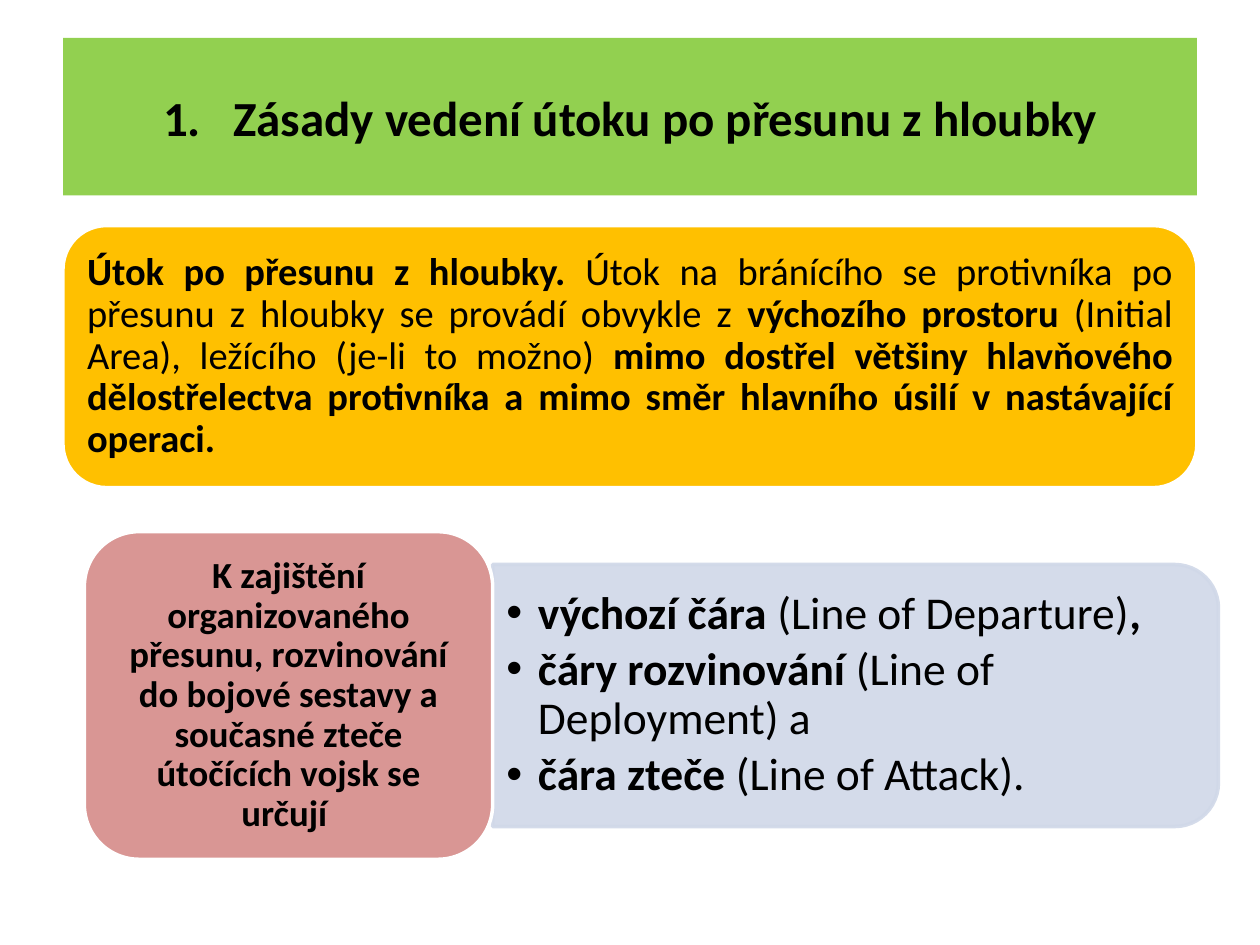
from dataclasses import dataclass

from lxml import etree
from pptx import Presentation, util as u
from pptx.dml.color import RGBColor
from pptx.enum import shapes, text
from pptx.oxml.ns import qn


@dataclass(frozen=True)
class Theme:
    font: str = "Calibri"
    ink: str = "000000"
    white: str = "FFFFFF"
    green: str = "92D050"
    amber: str = "FFC000"
    rose: str = "D99694"
    pale_blue: str = "D0D8E8"
    title_size: int = 28
    intro_size: int = 22
    purpose_size: int = 21
    list_size: int = 26
    line_width: int = 2
    line_spacing: float = 0.9


@dataclass(frozen=True)
class Box:
    left: float
    top: float
    width: float
    height: float

    def lengths(self) -> tuple:
        return tuple(map(u.Inches, (self.left, self.top, self.width, self.height)))


@dataclass(frozen=True)
class Card:
    box: Box
    fill: str
    size: int
    align: text.PP_ALIGN
    inset_y: float
    markup: str


THEME = Theme()
TITLE = "Zásady vedení útoku po přesunu z hloubky"
CARDS = (
    Card(Box(0.5, 1.79, 9, 2.08), THEME.amber, THEME.intro_size, text.PP_ALIGN.JUSTIFY, 0.09,
         "*Útok po přesunu z hloubky. *Útok na bránícího se protivníka po přesunu z hloubky "
         "se provádí obvykle z *výchozího prostoru *(Initial Area), ležícího (je-li to možno) "
         "*mimo dostřel většiny hlavňového dělostřelectva protivníka a mimo směr hlavního "
         "úsilí v nastávající operaci.*"),
    Card(Box(0.67, 4.22, 3.24, 2.6), THEME.rose, THEME.purpose_size, text.PP_ALIGN.CENTER, 0.04,
         "*K zajištění organizovaného přesunu, rozvinování do bojové sestavy a současné zteče "
         "útočících vojsk se určují *"),
)
LINES = (
    "*výchozí čára *(Line of Departure)*,*",
    "*čáry rozvinování *(Line of Deployment) a",
    "*čára zteče *(Line of Attack).",
)
PANEL = Box(5.75, 2.64, 2.08, 5.76)
LIST = Box(3.91, 4.58, 5.66, 1.88)


def place(sp, box: Box) -> None:
    sp.left, sp.top, sp.width, sp.height = box.lengths()


def paint(sp, fill: str, line: str) -> None:
    sp.shadow.inherit = False
    sp.fill.solid()
    sp.fill.fore_color.rgb = RGBColor.from_string(fill)
    sp.line.color.rgb = RGBColor.from_string(line)
    sp.line.width = u.Pt(THEME.line_width)


def set_frame(tf, inset_x: float, inset_y: float) -> None:
    tf.word_wrap = True
    tf.auto_size = text.MSO_AUTO_SIZE.NONE
    tf.vertical_anchor = text.MSO_ANCHOR.MIDDLE
    tf.margin_left = tf.margin_right = u.Inches(inset_x)
    tf.margin_top = tf.margin_bottom = u.Inches(inset_y)


def write(p, markup: str, size: int) -> None:
    """Add runs to a paragraph; text between asterisks is bold."""
    for i, part in enumerate(markup.split("*")):
        if part:
            r = p.add_run()
            r.text = part
            r.font.name = THEME.font
            r.font.size = u.Pt(size)
            r.font.bold = i % 2 == 1
            r.font.color.rgb = RGBColor.from_string(THEME.ink)


def hang(p, indent: float):
    """Give a paragraph a hanging indent and return its properties element."""
    pPr = p._p.get_or_add_pPr()
    pPr.set("marL", str(u.Inches(indent)))
    pPr.set("indent", str(-u.Inches(indent)))
    return pPr


def add_title(s) -> None:
    sp = s.shapes.title
    place(sp, Box(0.5, 0.3, 9, 1.25))
    sp.fill.solid()
    sp.fill.fore_color.rgb = RGBColor.from_string(THEME.green)
    set_frame(sp.text_frame, 0.1, 0.05)
    p = sp.text_frame.paragraphs[0]
    p.alignment = text.PP_ALIGN.CENTER
    etree.SubElement(hang(p, 0.56), qn("a:buAutoNum"), type="arabicPeriod")
    write(p, f"*{TITLE}*", THEME.title_size)


def add_card(s, card: Card) -> None:
    sp = s.shapes.add_shape(shapes.MSO_SHAPE.ROUNDED_RECTANGLE, *card.box.lengths())
    paint(sp, card.fill, THEME.white)
    set_frame(sp.text_frame, 0.09, card.inset_y)
    p = sp.text_frame.paragraphs[0]
    p.alignment = card.align
    p.line_spacing = THEME.line_spacing
    write(p, card.markup, card.size)


def add_panel(s):
    sp = s.shapes.add_shape(shapes.MSO_SHAPE.ROUND_2_SAME_RECTANGLE, *PANEL.lengths())
    sp.rotation = 90
    paint(sp, THEME.pale_blue, THEME.pale_blue)
    for clr in sp._element.spPr.iter(qn("a:srgbClr")):
        etree.SubElement(clr, qn("a:alpha"), val="90000")
    return sp


def fill_list(body) -> None:
    place(body, LIST)
    tf = body.text_frame
    set_frame(tf, 0.11, 0.05)
    for i, line in enumerate(LINES):
        p = tf.add_paragraph() if i else tf.paragraphs[0]
        hang(p, 0.25)
        p.line_spacing = THEME.line_spacing
        p.space_before = u.Pt(0)
        p.space_after = u.Pt(4)
        write(p, line, THEME.list_size)


def main() -> None:
    prs = Presentation()
    prs.slide_width, prs.slide_height = u.Inches(10), u.Inches(7.5)
    s = prs.slides.add_slide(prs.slide_layouts[1])
    body = s.placeholders[1]
    add_title(s)
    panel = add_panel(s)
    panel._element.addnext(body._element)  # the list lies on top of its panel
    fill_list(body)
    for card in CARDS:
        add_card(s, card)
    prs.save("out.pptx")


if __name__ == "__main__":
    main()
